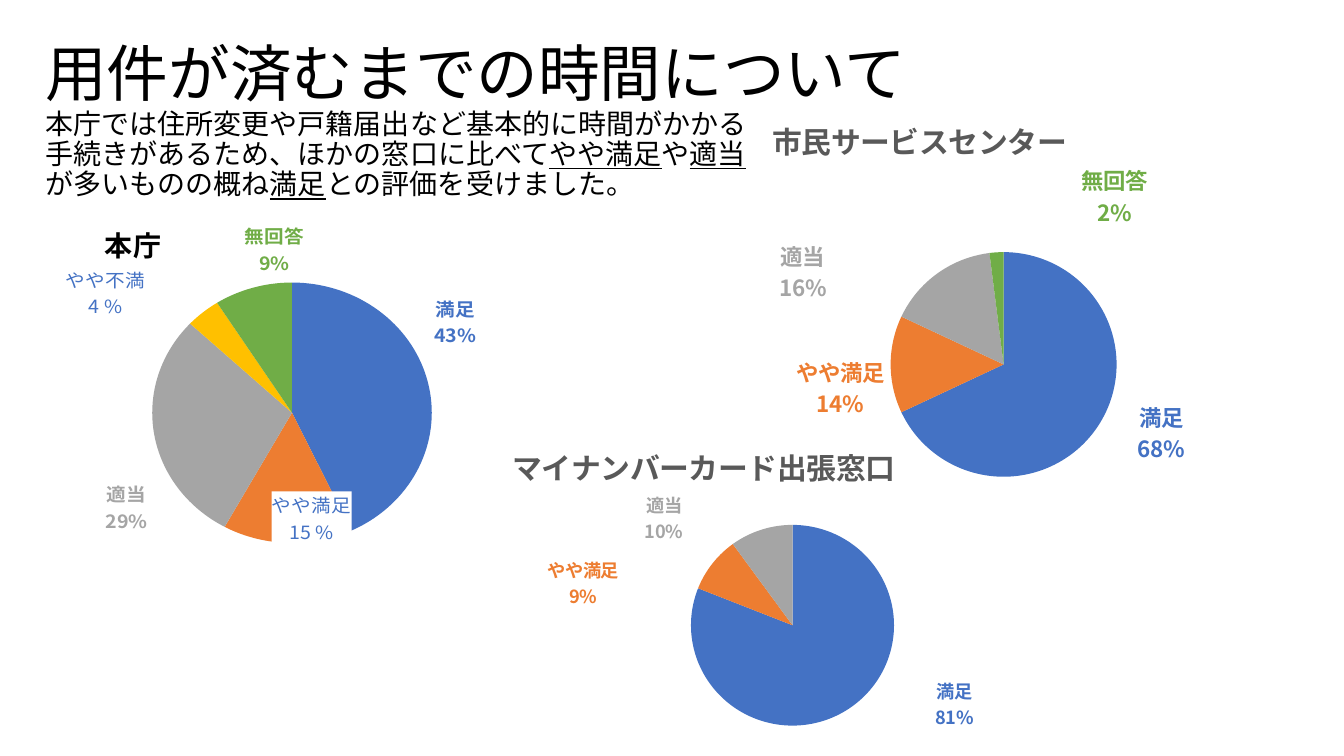
from lxml import etree
from pptx import Presentation
from pptx.chart.data import CategoryChartData
from pptx.dml.color import RGBColor
from pptx.enum.chart import XL_CHART_TYPE, XL_LABEL_POSITION
from pptx.enum.lang import MSO_LANGUAGE_ID
from pptx.enum.text import MSO_ANCHOR, MSO_AUTO_SIZE, PP_ALIGN
from pptx.oxml import parse_xml
from pptx.oxml.ns import nsdecls, qn
from pptx.util import Inches, Pt

PIE = XL_CHART_TYPE.PIE
OUTSIDE_END = XL_LABEL_POSITION.OUTSIDE_END
JAPANESE = MSO_LANGUAGE_ID.JAPANESE
LEFT = PP_ALIGN.LEFT
MIDDLE = MSO_ANCHOR.MIDDLE
NO_AUTOFIT = MSO_AUTO_SIZE.NONE

THEME = {
    "font": "Noto Sans CJK JP",
    "text": "000000",
    "chart_title": "595959",
    "slices": ["4472C4", "ED7D31", "A5A5A5", "FFC000", "5B9BD5", "70AD47"],
    "title_size": 44,
    "body_size": 20,
    "chart_title_size": 21.3,
}

CATEGORIES = ["満足", "やや満足", "適当", "やや不満", "不満", "無回答"]

# Boxes are in grid cells; plot, title and label places are shares of the chart.
# Each label is moved by its (x, y) share from the outer end of its slice.
CHARTS = [
    {
        "name": "本庁", "box": (6.5, 26, 57.7, 45.6), "title_at": None,
        "values": [43, 15, 29, 4, 0, 9], "plot": (0.2, 0.18, 0.58, 0.73), "label_size": 14,
        "labels": {0: (0, -0.1), 1: (0.05, -0.16), 2: (0, 0.13),
                   3: (-0.11, 0.03), 5: (0.11, -0.02)},
        "written": {1: "15 %", 3: "4 %"}, "boxed": [1],
    },
    {
        "name": "市民サービスセンター", "box": (86.6, 12.8, 67.1, 45.6), "title_at": (0.07, 0.01),
        "values": [68, 14, 16, 0, 0, 2], "plot": (0.12, 0.38, 0.74, 0.59), "label_size": 16,
        "labels": {0: (0.06, -0.07), 1: (0, 0.06), 2: (-0.19, 0.09), 5: (0.21, -0.05)},
        "written": {}, "boxed": [],
    },
    {
        "name": "マイナンバーカード出張窓口", "box": (56.6, 52.1, 75.5, 39), "title_at": (0.05, 0),
        "values": [81, 9, 10, 0, 0, 0], "plot": (0.33, 0.27, 0.34, 0.62), "label_size": 13,
        "labels": {0: (0.13, -0.11), 1: (-0.14, 0.15), 2: (-0.12, 0.06)},
        "written": {}, "boxed": [],
    },
]


def style_font(font, size, color, bold=False):
    """Apply the theme font to Latin and East Asian text alike."""
    font.name, font.size, font.bold = THEME["font"], Pt(size), bold
    font.language_id = JAPANESE
    font.color.rgb = RGBColor.from_string(color)
    etree.SubElement(font._rPr, qn("a:ea")).set("typeface", THEME["font"])


def manual_layout(**settings):
    """Build a c:layout element; settings follow the schema order."""
    layout = parse_xml(f"<c:layout {nsdecls('c')}><c:manualLayout/></c:layout>")
    for tag, value in settings.items():
        etree.SubElement(layout[0], qn(f"c:{tag}")).set("val", str(value))
    return layout


presentation = Presentation()
presentation.slide_width, presentation.slide_height = Inches(13.33), Inches(7.5)
cell = presentation.slide_width / 160
slide = presentation.slides.add_slide(presentation.slide_layouts[4])
title, heading, *unused = slide.placeholders
for placeholder in unused:
    placeholder._element.getparent().remove(placeholder._element)

for shape, box in [(title, (4.2, 2.9, 105.2, 23.3)), (heading, (11.3, 26.4, 41.5, 6))]:
    shape.left, shape.top, shape.width, shape.height = [round(cell * part) for part in box]
    shape.text_frame.word_wrap = True
    shape.text_frame.auto_size = NO_AUTOFIT
    shape.text_frame.vertical_anchor = MIDDLE
    shape.text_frame.paragraphs[0].alignment = LEFT
    shape.text_frame.paragraphs[0].line_spacing = 0.9

TITLE_LINES = [
    [("用件が済むまでの時間について", False)],
    [("本庁では住所変更や戸籍届出など基本的に時間がかかる", False)],
    [("手続きがあるため、ほかの窓口に比べて", False), ("やや満足", True), ("や", False), ("適当", True)],
    [("が多いものの概ね", False), ("満足", True), ("との評価を受けました。", False)],
]
paragraph = title.text_frame.paragraphs[0]
for number, line in enumerate(TITLE_LINES):
    if number:
        paragraph.add_line_break()
    for text, underlined in line:
        run = paragraph.add_run()
        run.text = text
        style_font(run.font, THEME["body_size" if number else "title_size"], THEME["text"])
        run.font.underline = underlined

run = heading.text_frame.paragraphs[0].add_run()
run.text = "本庁"
style_font(run.font, THEME["body_size"], THEME["text"], bold=True)

for survey in CHARTS:
    data = CategoryChartData()
    data.categories = CATEGORIES
    data.add_series(survey["name"], survey["values"])
    box = [round(cell * part) for part in survey["box"]]
    chart = slide.shapes.add_chart(PIE, *box, data).chart
    style_font(chart.font, survey["label_size"], THEME["text"])
    chart.has_legend = False
    chart_element = chart._chartSpace.find(qn("c:chart"))
    chart_element.addnext(parse_xml(
        f"<c:spPr {nsdecls('c', 'a')}><a:noFill/><a:ln><a:noFill/></a:ln></c:spPr>"))

    chart.has_title = survey["title_at"] is not None
    if chart.has_title:
        run = chart.chart_title.text_frame.paragraphs[0].add_run()
        run.text = survey["name"]
        style_font(run.font, THEME["chart_title_size"], THEME["chart_title"], bold=True)
        chart.chart_title.include_in_layout = False
        x, y = survey["title_at"]
        title_element = chart_element.find(qn("c:title"))
        for layout in title_element.findall(qn("c:layout")):
            title_element.remove(layout)
        title_element.find(qn("c:tx")).addnext(
            manual_layout(xMode="edge", yMode="edge", x=x, y=y))

    plot_area = chart_element.find(qn("c:plotArea"))
    for layout in plot_area.findall(qn("c:layout")):
        plot_area.remove(layout)
    x, y, width, height = survey["plot"]
    plot_area.insert(0, manual_layout(layoutTarget="inner", xMode="edge", yMode="edge",
                                      x=x, y=y, w=width, h=height))

    plot = chart.plots[0]
    plot.vary_by_categories = True
    series = plot.series[0]
    series.data_labels.show_value = False
    for leader in series._element.iter(qn("c:showLeaderLines")):
        leader.set("val", "0")
    for index, color in enumerate(THEME["slices"]):
        point = series.points[index]
        point.format.fill.solid()
        point.format.fill.fore_color.rgb = RGBColor.from_string(color)
        point.format.line.fill.background()
        if index not in survey["labels"]:
            continue

        label = point.data_label
        if index in survey["written"]:
            frame = label.text_frame
            lines = [CATEGORIES[index], survey["written"][index]]
            for paragraph, text in zip([frame.paragraphs[0], frame.add_paragraph()], lines):
                run = paragraph.add_run()
                run.text = text
                style_font(run.font, survey["label_size"], THEME["slices"][0])
        else:
            style_font(label.font, survey["label_size"], color, bold=True)
        label.position = OUTSIDE_END

        element = series._element.xpath(f'c:dLbls/c:dLbl[c:idx/@val="{index}"]')[0]
        x, y = survey["labels"][index]
        element.find(qn("c:idx")).addnext(manual_layout(x=x, y=y))
        for tag, shown in [("showVal", 0), ("showCatName", 1), ("showPercent", 1)]:
            element.find(qn(f"c:{tag}")).set("val", str(shown))
        etree.SubElement(element, qn("c:separator")).text = "\n"
        if index in survey["boxed"]:
            element.find(qn("c:dLblPos")).addprevious(parse_xml(
                f"<c:spPr {nsdecls('c', 'a')}><a:solidFill>"
                '<a:srgbClr val="FFFFFF"/></a:solidFill></c:spPr>'))

presentation.save("out.pptx")
